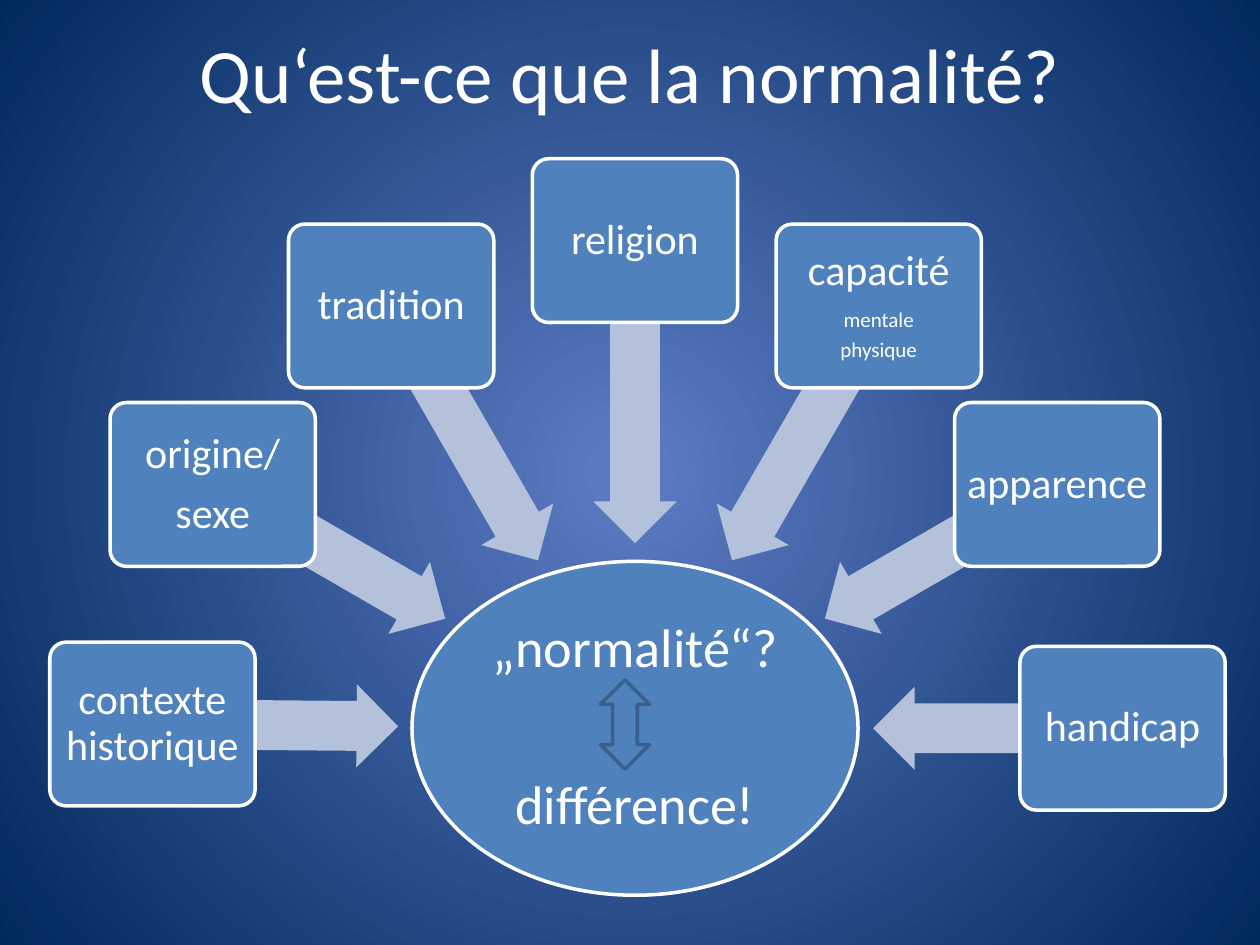
from math import cos, radians, sin

from lxml import etree
from pptx import Presentation
from pptx.dml.color import RGBColor
from pptx.enum.shapes import MSO_SHAPE
from pptx.enum.text import MSO_ANCHOR, PP_ALIGN
from pptx.oxml.ns import qn
from pptx.util import Inches, Pt

ELLIPSE, ARROW = MSO_SHAPE.OVAL, MSO_SHAPE.LEFT_ARROW
CARD, DOUBLE_ARROW = MSO_SHAPE.ROUNDED_RECTANGLE, MSO_SHAPE.UP_DOWN_ARROW
CENTER, MIDDLE = PP_ALIGN.CENTER, MSO_ANCHOR.MIDDLE

WHITE = RGBColor(0xFF, 0xFF, 0xFF)
BLUE = RGBColor(0x4F, 0x81, 0xBD)
PALE = RGBColor(0xB3, 0xC1, 0xDB)
OUTLINE = RGBColor(0x3A, 0x5F, 0x8C)
GLOW = RGBColor(0x5E, 0x7C, 0xC5)
NAVY = RGBColor(0x00, 0x29, 0x5C)

WIDTH, HEIGHT = 10, 7.5
FONT = "Calibri"
RADIUS = 3.87
CARD_W, CARD_H = 1.63, 1.3
ARROW_H = 0.66

# angle clockwise from the right, distance from the hub, arrow length, (text, size) lines
FACTORS = [
    (180.5, 3.83, 1.95, [("contexte historique", 24)]),
    (210, RADIUS, 2.13, [("origine/", 24), ("sexe", 24)]),
    (240, RADIUS, 2.33, [("tradition", 24)]),
    (270, RADIUS, 2.4, [("religion", 24)]),
    (300, RADIUS, 2.33, [("capacité", 24), ("mentale", 12), ("physique", 12)]),
    (330, RADIUS, 2.13, [("apparence", 24)]),
    (360, RADIUS, 1.98, [("handicap", 24)]),
]


def set_background(s):
    """Radial gradient, light in the middle."""
    fill = s.background.fill
    fill.gradient()
    for stop, color in zip(fill.gradient_stops, (GLOW, NAVY)):
        stop.color.rgb = color
    grad = s.background._cSld.find(".//" + qn("a:gradFill"))
    grad.remove(grad.find(qn("a:lin")))
    path = etree.SubElement(grad, qn("a:path"), path="circle")
    etree.SubElement(path, qn("a:fillToRect"), l="50000", t="50000", r="50000", b="50000")


def add_shape(s, kind, cx, cy, w, h, fill, line=None):
    """Preset shape centred on (cx, cy)."""
    sp = s.shapes.add_shape(kind, Inches(cx - w / 2), Inches(cy - h / 2), Inches(w), Inches(h))
    sp.shadow.inherit = False
    sp.fill.solid()
    sp.fill.fore_color.rgb = fill
    if line is None:
        sp.line.fill.background()
    else:
        sp.line.color.rgb = line
        sp.line.width = Pt(2)
    return sp


def write_lines(sp, lines, inset=0.01):
    tf = sp.text_frame
    tf.word_wrap = True
    tf.vertical_anchor = MIDDLE
    tf.margin_left = tf.margin_right = tf.margin_top = tf.margin_bottom = Inches(inset)
    for i, (text, size) in enumerate(lines):
        p = tf.add_paragraph() if i else tf.paragraphs[0]
        p.text = text
        p.alignment = CENTER
        p.line_spacing = 0.9
        p.space_after = Pt(0.35 * size)
        p.font.name, p.font.size, p.font.color.rgb = FONT, Pt(size), WHITE
    return tf


def add_title(s, x, y, w, h):
    sp = s.shapes.add_textbox(Inches(x), Inches(y), Inches(w), Inches(h))
    tf = write_lines(sp, [("Qu‘est-ce que la normalité?", 44)], inset=0.05)
    tf.paragraphs[0].line_spacing = 1
    tf.paragraphs[0].space_after = Pt(0)


def add_hub(s, cx, cy, w, h):
    hub = add_shape(s, ELLIPSE, cx, cy, w, h, BLUE, WHITE)
    tf = write_lines(hub, [("„normalité“?", 31), ("différence!", 31)])
    tf.paragraphs[1].space_before = Pt(45)


def add_factor(s, cx, cy, angle, distance, length, lines):
    """Card on the arc around (cx, cy), with an arrow from its middle towards the hub."""
    dx, dy = cos(radians(angle)), sin(radians(angle))
    mid = distance - length / 2
    arrow = add_shape(s, ARROW, cx + mid * dx, cy + mid * dy, length, ARROW_H, PALE)
    arrow.rotation = angle % 360
    arrow.adjustments[0], arrow.adjustments[1] = 0.6, 0.5
    card = add_shape(s, CARD, cx + distance * dx, cy + distance * dy,
                     CARD_W, CARD_H, BLUE, WHITE)
    card.adjustments[0] = 0.1
    write_lines(card, lines)


def add_diagram(s, cx, cy):
    add_hub(s, cx, cy, 3.54, 2.65)
    for factor in FACTORS:
        add_factor(s, cx, cy, *factor)
    add_shape(s, DOUBLE_ARROW, cx - 0.08, cy - 0.03, 0.39, 0.71, BLUE, OUTLINE)


def main():
    prs = Presentation()
    prs.slide_width, prs.slide_height = Inches(WIDTH), Inches(HEIGHT)
    s = prs.slides.add_slide(prs.slide_layouts[6])
    set_background(s)
    add_title(s, 0, 0, WIDTH, 1.15)
    add_diagram(s, 5.04, 5.78)
    prs.save("out.pptx")


if __name__ == "__main__":
    main()
